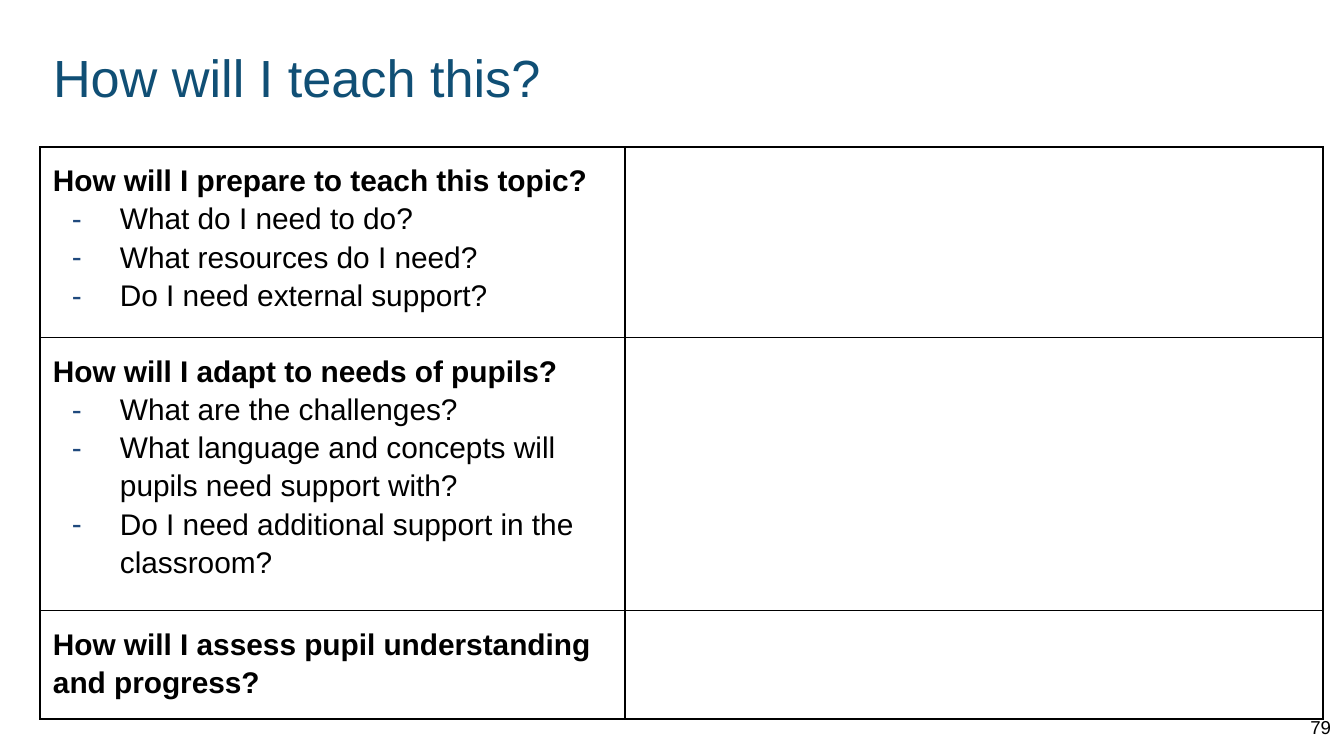
from dataclasses import dataclass

from lxml import etree
from pptx import Presentation
from pptx.dml.color import RGBColor
from pptx.enum.text import MSO_ANCHOR, PP_ALIGN
from pptx.oxml.ns import qn
from pptx.util import Pt

LEFT, RIGHT = PP_ALIGN.LEFT, PP_ALIGN.RIGHT
TOP, MIDDLE = MSO_ANCHOR.TOP, MSO_ANCHOR.MIDDLE
WIDE, HIGH = 1344, 756
SCALE = 9144000 / WIDE


@dataclass(frozen=True)
class Theme:
    font: str = "Arial"
    title: str = "104F75"
    ink: str = "000000"
    dash: str = "1F497D"
    head: int = 28
    body: int = 16
    note: int = 10
    rule: float = 0.75
    pad: int = 13
    inset: int = 67
    hang: int = 48


def px(size):
    return round(size * SCALE)


def add(parent, tag, **attrs):
    node = etree.SubElement(parent, qn(tag))
    for name, value in attrs.items():
        node.set(name, str(value))
    return node


def write(para, text, *, font, size, color, bold=False, align=LEFT, space=None):
    para.alignment = align
    if space:
        para.line_spacing = space
    run = para.add_run()
    run.text = text
    run.font.name = font
    run.font.size = Pt(size)
    run.font.bold = bold
    run.font.color.rgb = RGBColor.from_string(color)


class Deck:
    def __init__(self, theme):
        self.theme = theme
        self.file = Presentation()
        self.file.slide_width = px(WIDE)
        self.file.slide_height = px(HIGH)
        self.slide = self.file.slides.add_slide(self.file.slide_layouts[6])

    def pad(self, item):
        item.margin_left = item.margin_right = px(self.theme.pad)
        item.margin_top = item.margin_bottom = px(self.theme.pad)

    def label(self, box, text, anchor=TOP, **style):
        frame = self.slide.shapes.add_textbox(*map(px, box)).text_frame
        frame.word_wrap = True
        frame.vertical_anchor = anchor
        self.pad(frame)
        write(frame.paragraphs[0], text, font=self.theme.font, **style)

    def bullet(self, para):
        props = para._p.get_or_add_pPr()
        props.set("marL", str(px(self.theme.inset)))
        props.set("indent", str(-px(self.theme.hang)))
        add(add(props, "a:buClr"), "a:srgbClr", val=self.theme.dash)
        add(props, "a:buFont", typeface=self.theme.font)
        add(props, "a:buChar", char="-")

    def border(self, cell):
        props = cell._tc.get_or_add_tcPr()
        for spot, side in enumerate("LRTB"):
            line = add(props, f"a:ln{side}", w=Pt(self.theme.rule))
            add(add(line, "a:solidFill"), "a:srgbClr", val=self.theme.ink)
            props.insert(spot, line)

    def fill(self, cell, head, points):
        frame = cell.text_frame
        style = dict(font=self.theme.font, size=self.theme.body,
                     color=self.theme.ink, space=1.15)
        write(frame.paragraphs[0], head, bold=True, **style)
        for point in points:
            para = frame.add_paragraph()
            write(para, point, **style)
            self.bullet(para)

    def table(self, left, top, cols, rows, topics):
        box = map(px, (left, top, sum(cols), sum(rows)))
        grid = self.slide.shapes.add_table(len(rows), len(cols), *box).table
        grid.first_row = grid.horz_banding = False
        for col, width in zip(grid.columns, cols):
            col.width = px(width)
        for row, height in zip(grid.rows, rows):
            row.height = px(height)
        for cell in grid.iter_cells():
            self.pad(cell)
            cell.fill.background()
            self.border(cell)
        for spot, (head, points) in enumerate(topics):
            self.fill(grid.cell(spot, 0), head, points)


TOPICS = [
    ("How will I prepare to teach this topic?", [
        "What do I need to do?",
        "What resources do I need?",
        "Do I need external support?",
    ]),
    ("How will I adapt to needs of pupils?", [
        "What are the challenges?",
        "What language and concepts will pupils need support with?",
        "Do I need additional support in the classroom?",
    ]),
    ("How will I assess pupil understanding and progress?", []),
]


def main():
    theme = Theme()
    deck = Deck(theme)
    deck.label((40, 32, 1140, 85), "How will I teach this?",
               size=theme.head, color=theme.title)
    deck.label((1263, 698, 81, 58), "79", anchor=MIDDLE,
               size=theme.note, color=theme.ink, align=RIGHT)
    deck.table(40, 147, (585, 698), (186, 259, 103), TOPICS)
    deck.file.save("out.pptx")


if __name__ == "__main__":
    main()
